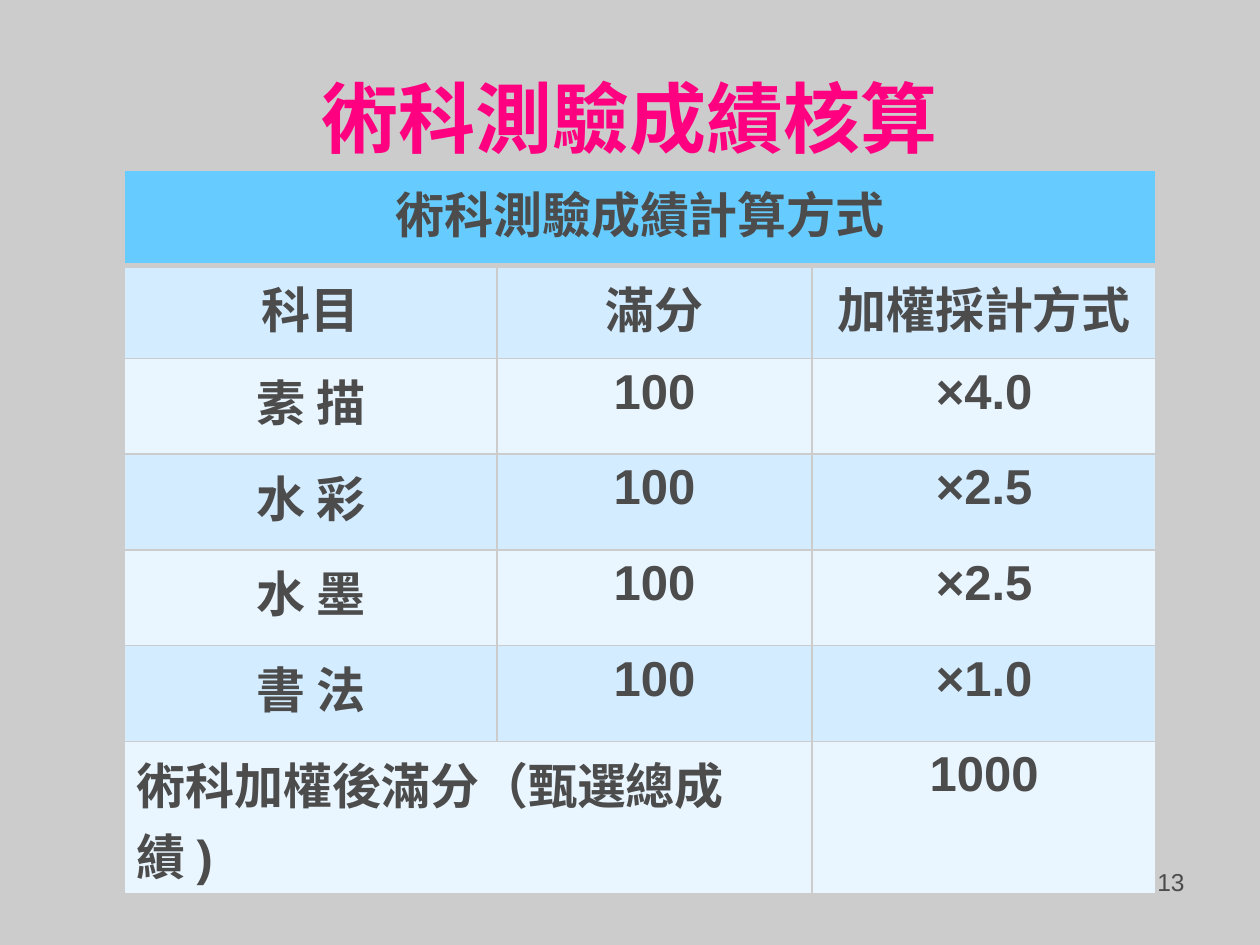
"""Build the slide on how practical test scores are weighted."""
from dataclasses import dataclass

from lxml import etree
from pptx import Presentation, util as u
from pptx.dml.color import RGBColor
from pptx.enum import text
from pptx.oxml import ns

CENTER, LEFT, RIGHT = text.PP_ALIGN.CENTER, text.PP_ALIGN.LEFT, text.PP_ALIGN.RIGHT
SLIDE_WIDTH, SLIDE_HEIGHT = u.Inches(10), u.Inches(7.5)
GRID_COLUMNS, GRID_ROWS = 200, 150


@dataclass(frozen=True)
class Theme:
    backdrop: str = "CCCCCC"
    accent: str = "FF0080"
    ink: str = "4C4C4C"
    header: str = "66CCFF"
    bands: tuple = ("EAF6FF", "D3ECFF")
    latin: str = "Arial"
    chinese: str = "Noto Sans CJK TC"
    title_size: int = 44
    table_size: int = 28
    number_size: int = 14
    rule: int = 1
    header_rule: int = 3


@dataclass(frozen=True)
class Label:
    wording: str
    area: tuple
    format: dict
    color: str
    align: text.PP_ALIGN
    anchor: text.MSO_ANCHOR


THEME = Theme()
LABELS = (
    Label("術科測驗成績核算", (10, 6, 180, 25),
          {"name": THEME.chinese, "size": u.Pt(THEME.title_size), "bold": True},
          THEME.accent, CENTER, text.MSO_ANCHOR.MIDDLE),
    Label("13", (143.4, 136.6, 46.6, 10.4),
          {"name": THEME.latin, "size": u.Pt(THEME.number_size), "bold": False},
          THEME.ink, RIGHT, text.MSO_ANCHOR.TOP),
)
TABLE_FORMAT = {"name": THEME.latin, "size": u.Pt(THEME.table_size), "bold": True}
COLUMN_SPANS = (59.2, 50, 54.6)
ROW_SPANS = (15.1, 14.8, 15.2, 15.2, 15.2, 15.2, 24.2)
TABLE_AREA = (19.7, 27, sum(COLUMN_SPANS), sum(ROW_SPANS))
SCORES = (
    ("術科測驗成績計算方式", "", ""),
    ("科目", "滿分", "加權採計方式"),
    ("素 描", "100", "×4.0"),
    ("水 彩", "100", "×2.5"),
    ("水 墨", "100", "×2.5"),
    ("書 法", "100", "×1.0"),
    ("術科加權後滿分（甄選總成績 )", "", "1000"),
)


def across(columns: float) -> int:
    return round(SLIDE_WIDTH * columns / GRID_COLUMNS)


def down(rows: float) -> int:
    return round(SLIDE_HEIGHT * rows / GRID_ROWS)


def place(area: tuple) -> tuple:
    left, top, width, height = area
    return across(left), down(top), across(width), down(height)


def write(paragraph, wording: str, format: dict, color: str, align) -> None:
    paragraph.alignment = align
    run = paragraph.add_run()
    run.text = wording
    for attribute, value in format.items():
        setattr(run.font, attribute, value)
    run.font.color.rgb = RGBColor.from_string(color)
    etree.SubElement(run.font._element, ns.qn("a:ea"), typeface=THEME.chinese)


def add_label(slide, label: Label) -> None:
    frame = slide.shapes.add_textbox(*place(label.area)).text_frame
    frame.word_wrap = True
    frame.vertical_anchor = label.anchor
    write(frame.paragraphs[0], label.wording, label.format, label.color, label.align)


def style_cell(cell, row: int) -> None:
    properties = cell._tc.get_or_add_tcPr()
    for side in ("L", "R", "T", "B"):
        below_header = (row, side) in ((0, "B"), (1, "T"))
        width = THEME.header_rule if below_header else THEME.rule
        line = etree.SubElement(properties, ns.qn(f"a:ln{side}"), w=str(u.Pt(width)))
        paint = etree.SubElement(line, ns.qn("a:solidFill"))
        etree.SubElement(paint, ns.qn("a:srgbClr"), val=THEME.backdrop)
    cell.fill.solid()
    shade = THEME.bands[row % 2] if row else THEME.header
    cell.fill.fore_color.rgb = RGBColor.from_string(shade)


def add_scores(slide) -> None:
    size = len(ROW_SPANS), len(COLUMN_SPANS)
    table = slide.shapes.add_table(*size, *place(TABLE_AREA)).table
    table.first_row = table.horz_banding = False
    for column, span in zip(table.columns, COLUMN_SPANS):
        column.width = across(span)
    for row, span in zip(table.rows, ROW_SPANS):
        row.height = down(span)
    last = len(SCORES) - 1
    table.cell(0, 0).merge(table.cell(0, 2))
    table.cell(last, 0).merge(table.cell(last, 1))
    for row, entries in enumerate(SCORES):
        for column, wording in enumerate(entries):
            cell = table.cell(row, column)
            style_cell(cell, row)
            if wording:
                align = LEFT if (row, column) == (last, 0) else CENTER
                write(cell.text_frame.paragraphs[0], wording, TABLE_FORMAT, THEME.ink, align)


def main() -> None:
    deck = Presentation()
    deck.slide_width, deck.slide_height = SLIDE_WIDTH, SLIDE_HEIGHT
    slide = deck.slides.add_slide(deck.slide_layouts[6])
    slide.background.fill.solid()
    slide.background.fill.fore_color.rgb = RGBColor.from_string(THEME.backdrop)
    for label in LABELS:
        add_label(slide, label)
    add_scores(slide)
    deck.save("out.pptx")


if __name__ == "__main__":
    main()
